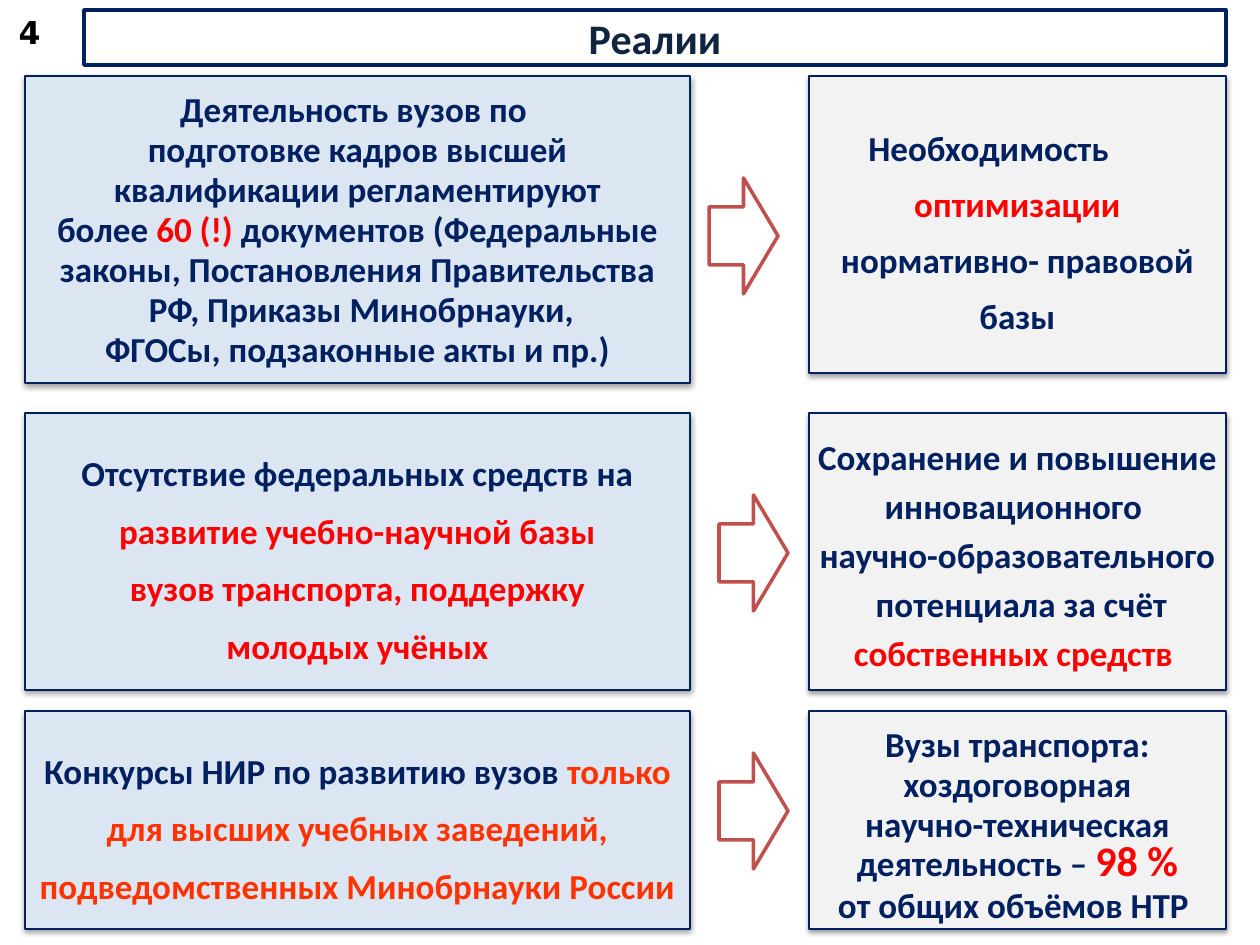
from dataclasses import dataclass

import pptx
import pptx.dml.color
import pptx.enum.shapes
import pptx.enum.text
import pptx.oxml
import pptx.oxml.ns
import pptx.util
from pptx.dml.color import RGBColor

EMU_PER_PX = 914400 / 126
NAVY = RGBColor(0x00, 0x20, 0x60)
INK = RGBColor(0x0F, 0x24, 0x3E)
RED = RGBColor(0xFF, 0x00, 0x00)
ORANGE = RGBColor(0xFF, 0x33, 0x00)
BRICK = RGBColor(0xC0, 0x50, 0x4D)
PALE_BLUE = RGBColor(0xDC, 0xE6, 0xF2)
PALE_GREY = RGBColor(0xF2, 0xF2, 0xF2)
WHITE = RGBColor(0xFF, 0xFF, 0xFF)
BLACK = RGBColor(0x00, 0x00, 0x00)
CENTER = pptx.enum.text.PP_ALIGN.CENTER
LEFT = pptx.enum.text.PP_ALIGN.LEFT
MIDDLE = pptx.enum.text.MSO_ANCHOR.MIDDLE
SHAPES = pptx.enum.shapes.MSO_SHAPE

SHADOW_XML = (
    f'<a:effectLst {pptx.oxml.ns.nsdecls("a")}>'
    '<a:outerShdw blurRad="40000" dist="20000" dir="5400000" rotWithShape="0">'
    '<a:srgbClr val="000000"><a:alpha val="38000"/></a:srgbClr>'
    "</a:outerShdw></a:effectLst>"
)


@dataclass(frozen=True)
class Span:
    text: str
    color: RGBColor = NAVY
    size: int = 20


@dataclass(frozen=True)
class Line:
    spans: tuple[Span, ...]
    indent: int = 0


@dataclass(frozen=True)
class Panel:
    height: int
    spacing: float
    lines: tuple[Line, ...]
    drop: int = 0


@dataclass(frozen=True)
class Row:
    top: int
    problem: Panel
    response: Panel
    arrow_left: int
    arrow_top: int


def line(text: str, color: RGBColor = NAVY, indent: int = 0) -> Line:
    return Line((Span(text, color),), indent)


ROWS = (
    Row(
        76,
        Panel(307, 22.8, (
            line("Деятельность вузов по "),
            line("подготовке кадров высшей"),
            line("квалификации регламентируют"),
            Line((Span("более "), Span("60 (!) ", RED), Span("документов (Федеральные"))),
            line("законы, Постановления Правительства"),
            line(" РФ, Приказы Минобрнауки,"),
            line("ФГОСы, подзаконные акты и пр.)"),
        )),
        Panel(297, 32, (
            line("Необходимость", indent=47),
            line("оптимизации", RED),
            line(" нормативно- правовой "),
            line("базы"),
        )),
        709, 178,
    ),
    Row(
        413,
        Panel(277, 32.8, (
            line("Отсутствие федеральных средств на"),
            line("развитие учебно-научной базы", RED),
            line("вузов транспорта, поддержку", RED),
            line("молодых учёных", RED),
        )),
        Panel(277, 28, (
            line("Сохранение и повышение"),
            line("инновационного "),
            line("научно-образовательного"),
            line(" потенциала за счёт"),
            line("собственных средств ", RED),
        )),
        719, 495,
    ),
    Row(
        711,
        Panel(218, 32.8, (
            Line((Span("Конкурсы НИР по развитию вузов "), Span("только", ORANGE))),
            line("для высших учебных заведений,", ORANGE),
            line("подведомственных Минобрнауки России", ORANGE),
        )),
        Panel(218, 23, (
            line("Вузы транспорта:"),
            line("хоздоговорная"),
            line("научно-техническая"),
            Line((Span("деятельность – "), Span("98 %", RED, 24))),
            line("от общих объёмов НТР "),
        ), drop=9),
        719, 753,
    ),
)


def px(value: int) -> pptx.util.Emu:
    return pptx.util.Emu(round(value * EMU_PER_PX))


def paint(shape, fill: RGBColor, outline: RGBColor, width: float) -> None:
    shape.fill.solid()
    shape.fill.fore_color.rgb = fill
    shape.line.color.rgb = outline
    shape.line.width = pptx.util.Pt(width)


def style(font, size: int, color: RGBColor, name: str = "Calibri") -> None:
    font.name = name
    font.size = pptx.util.Pt(size)
    font.bold = True
    font.color.rgb = color


def add_panel(slide, left: int, top: int, width: int, fill: RGBColor, panel: Panel) -> None:
    shape = slide.shapes.add_shape(
        SHAPES.RECTANGLE, px(left), px(top), px(width), px(panel.height))
    paint(shape, fill, NAVY, 0.75)
    shape._element.spPr.append(pptx.oxml.parse_xml(SHADOW_XML))
    frame = shape.text_frame
    frame.word_wrap = False
    frame.vertical_anchor = MIDDLE
    frame.margin_top = px(6 + panel.drop)
    for index, item in enumerate(panel.lines):
        paragraph = frame.add_paragraph() if index else frame.paragraphs[0]
        paragraph.alignment = LEFT if item.indent else CENTER
        paragraph.line_spacing = pptx.util.Pt(panel.spacing)
        if item.indent:
            paragraph._p.get_or_add_pPr().set("marL", str(px(item.indent)))
        for span in item.spans:
            run = paragraph.add_run()
            run.text = span.text
            style(run.font, span.size, span.color)


def add_arrow(slide, left: int, top: int) -> None:
    shape = slide.shapes.add_shape(SHAPES.RIGHT_ARROW, px(left), px(top), px(69), px(116))
    shape.shadow.inherit = False
    paint(shape, WHITE, BRICK, 2)


def add_title(slide) -> None:
    title = slide.shapes.title
    title.left, title.top, title.width, title.height = px(84), px(10), px(1142), px(55)
    paint(title, WHITE, NAVY, 2)
    frame = title.text_frame
    frame.text = "Реалии"
    frame.vertical_anchor = MIDDLE
    frame.margin_left = frame.margin_right = px(8)
    frame.margin_top = frame.margin_bottom = px(4)
    frame.paragraphs[0].alignment = CENTER
    style(frame.paragraphs[0].runs[0].font, 24, INK)


def add_page_number(slide) -> None:
    frame = slide.shapes.add_textbox(px(5), px(6), px(49), px(52)).text_frame
    frame.text = "4"
    frame.word_wrap = True
    frame.vertical_anchor = MIDDLE
    frame.paragraphs[0].alignment = CENTER
    style(frame.paragraphs[0].runs[0].font, 18, BLACK, "DejaVu Sans")


def main() -> None:
    presentation = pptx.Presentation()
    presentation.slide_width, presentation.slide_height = px(1260), px(945)
    slide = presentation.slides.add_slide(presentation.slide_layouts[5])
    add_page_number(slide)
    add_title(slide)
    for row in ROWS:
        add_panel(slide, 25, row.top, 665, PALE_BLUE, row.problem)
        add_panel(slide, 809, row.top, 417, PALE_GREY, row.response)
        add_arrow(slide, row.arrow_left, row.arrow_top)
    presentation.save("out.pptx")


if __name__ == "__main__":
    main()
